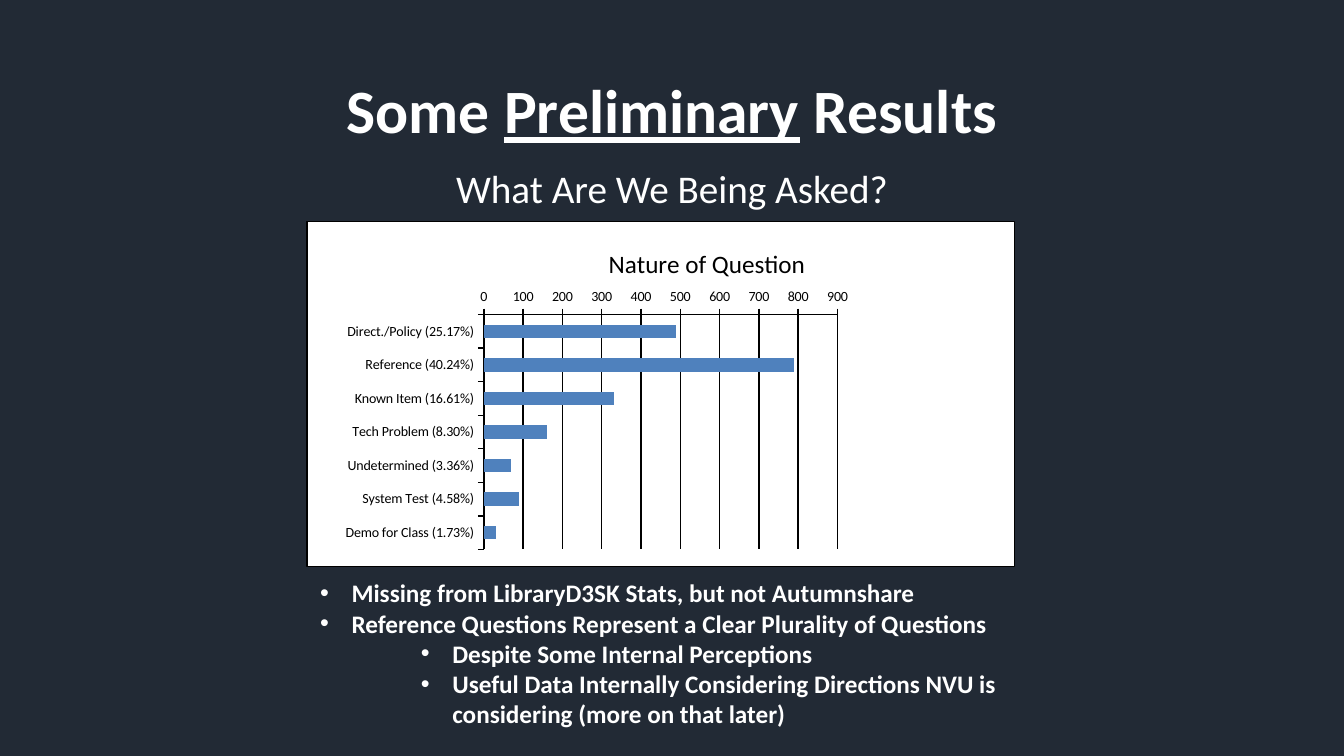
"""Build the slide of preliminary results on the nature of questions asked."""
from lxml import etree
from pptx import Presentation
from pptx.chart.data import CategoryChartData
from pptx.dml.color import RGBColor
from pptx.enum.chart import XL_CHART_TYPE, XL_TICK_MARK
from pptx.enum.text import MSO_ANCHOR, MSO_AUTO_SIZE, PP_ALIGN
from pptx.oxml import parse_xml
from pptx.oxml.ns import nsdecls, qn
from pptx.util import Cm, Pt

BAR_CLUSTERED = XL_CHART_TYPE.BAR_CLUSTERED
TICK_OUTSIDE, TICK_NONE = XL_TICK_MARK.OUTSIDE, XL_TICK_MARK.NONE
CENTER, MIDDLE = PP_ALIGN.CENTER, MSO_ANCHOR.MIDDLE
NO_FIT, GROW = MSO_AUTO_SIZE.NONE, MSO_AUTO_SIZE.SHAPE_TO_FIT_TEXT
FONT, WHITE, BLACK, NAVY, BLUE = "Calibri", "FFFFFF", "000000", "222A35", "4F81BD"

QUESTIONS = {
    "Direct./Policy (25.17%)": 490,
    "Reference (40.24%)": 790,
    "Known Item (16.61%)": 330,
    "Tech Problem (8.30%)": 160,
    "Undetermined (3.36%)": 70,
    "System Test (4.58%)": 90,
    "Demo for Class (1.73%)": 30,
}
FINDINGS = [
    ("Missing from LibraryD3SK Stats, but not Autumnshare", 0),
    ("Reference Questions Represent a Clear Plurality of Questions", 0),
    ("Despite Some Internal Perceptions", 2),
    ("Useful Data Internally Considering Directions NVU is "
     "considering (more on that later)", 2),
]


def colour(value):
    return RGBColor.from_string(value)


def style(font, size, shade, bold=False):
    font.name, font.size, font.bold = FONT, Pt(size), bold
    font.color.rgb = colour(shade)


def place(shape, left, top, width, height):
    shape.left, shape.top = Cm(left), Cm(top)
    shape.width, shape.height = Cm(width), Cm(height)


def set_bullet(para, mark, margin=0, indent=0):
    properties = para._p.get_or_add_pPr()
    properties.set("marL", str(Cm(margin)))
    properties.set("indent", str(Cm(indent)))
    if mark:
        etree.SubElement(properties, qn("a:buFont")).set("typeface", "Arial")
        etree.SubElement(properties, qn("a:buChar")).set("char", mark)
    else:
        etree.SubElement(properties, qn("a:buNone"))


def add_title(page):
    title = page.shapes.title
    place(title, 2.33, 1.02, 29.21, 3.68)
    frame = title.text_frame
    frame.auto_size, frame.vertical_anchor = NO_FIT, MIDDLE
    para = frame.paragraphs[0]
    para.alignment, para.line_spacing = CENTER, 0.9
    for words in ("Some ", "Preliminary", " Results"):
        span = para.add_run()
        span.text = words
        style(span.font, 44, WHITE, bold=True)
        span.font.underline = words == "Preliminary"


def add_subtitle(page):
    body = page.placeholders[1]
    place(body, 2.33, 4.14, 29.21, 12.09)
    body.text_frame.text = "What Are We Being Asked?"
    body.text_frame.auto_size = NO_FIT
    para = body.text_frame.paragraphs[0]
    para.alignment, para.line_spacing, para.space_before = CENTER, 0.9, Pt(10)
    set_bullet(para, None)
    style(para.runs[0].font, 28, WHITE)


def set_layout(element, position, target="", **numbers):
    """Give a chart title or plot area a manual layout."""
    for old in element.findall(qn("c:layout")):
        element.remove(old)
    entries = [("xMode", "edge"), ("yMode", "edge"), *numbers.items()]
    tags = "".join(f'<c:{name} val="{value}"/>' for name, value in entries)
    element.insert(position, parse_xml(
        f'<c:layout {nsdecls("c")}><c:manualLayout>{target}{tags}'
        "</c:manualLayout></c:layout>"))


def area_fill(border):
    return parse_xml(
        f'<c:spPr {nsdecls("c", "a")}><a:solidFill><a:srgbClr val="{WHITE}"/>'
        f"</a:solidFill>{border}</c:spPr>")


def style_line(line):
    line.color.rgb = colour(BLACK)
    line.width = Pt(1)


def style_axis(axis):
    style(axis.tick_labels.font, 10, BLACK)
    style_line(axis.format.line)
    axis.major_tick_mark, axis.minor_tick_mark = TICK_OUTSIDE, TICK_NONE


def add_question_chart(page):
    data = CategoryChartData()
    data.categories = list(QUESTIONS)
    data.add_series("Nature of Question", list(QUESTIONS.values()))
    chart = page.shapes.add_chart(
        BAR_CLUSTERED, Cm(7.72), Cm(5.56), Cm(17.86), Cm(8.74), data).chart
    style(chart.font, 10, BLACK)
    chart.has_legend = False
    chart.has_title = True
    heading = chart.chart_title.text_frame
    heading.text = "Nature of Question"
    style(heading.paragraphs[0].runs[0].font, 18, BLACK)
    set_layout(chart.chart_title._element, 1, x=0.42, y=0.06)

    categories, values = chart.category_axis, chart.value_axis
    style_axis(categories)
    style_axis(values)
    categories.reverse_order = True
    values.minimum_scale, values.maximum_scale, values.major_unit = 0, 900, 100
    values.has_major_gridlines = True
    style_line(values.major_gridlines.format.line)
    values.tick_labels.number_format = "0"
    values.tick_labels.number_format_is_linked = False

    plot = chart.plots[0]
    plot.gap_width, plot.vary_by_categories = 150, False
    fill = plot.series[0].format.fill
    fill.solid()
    fill.fore_color.rgb = colour(BLUE)

    space = chart._chartSpace.find(qn("c:chart"))
    area = space.find(qn("c:plotArea"))
    set_layout(area, 0, '<c:layoutTarget val="inner"/>',
               x=0.25, y=0.27, w=0.5, h=0.68)
    area.append(area_fill("<a:ln><a:noFill/></a:ln>"))
    space.addnext(area_fill(
        f'<a:ln w="{Pt(1)}"><a:solidFill><a:srgbClr val="{BLACK}"/>'
        "</a:solidFill></a:ln>"))


def add_findings(page):
    box = page.shapes.add_textbox(Cm(7.82), Cm(14.43), Cm(18.21), Cm(4.11))
    frame = box.text_frame
    frame.word_wrap, frame.auto_size = True, GROW
    frame.text = "\n".join(words for words, level in FINDINGS)
    for para, (words, level) in zip(frame.paragraphs, FINDINGS):
        para.level = level
        set_bullet(para, "•", 0.79 + 1.27 * level, -0.79)
        style(para.runs[0].font, 18, WHITE, bold=True)


def main():
    deck = Presentation()
    deck.slide_width, deck.slide_height = Cm(33.87), Cm(19.05)
    page = deck.slides.add_slide(deck.slide_layouts[1])
    backdrop = page.background.fill
    backdrop.solid()
    backdrop.fore_color.rgb = colour(NAVY)
    add_title(page)
    add_subtitle(page)
    add_question_chart(page)
    add_findings(page)
    deck.save("out.pptx")


if __name__ == "__main__":
    main()
